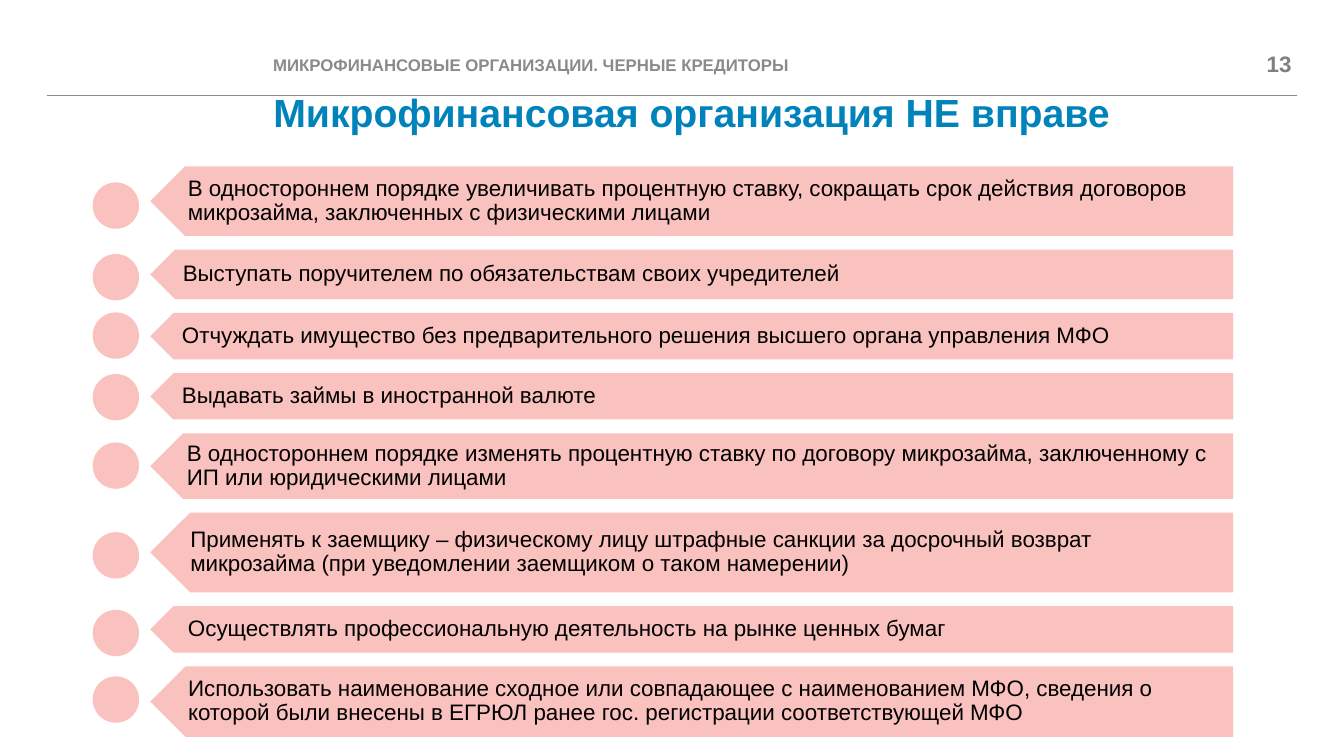
"""Build the slide listing what a microfinance organisation may not do."""
import pptx
import pptx.dml.color
import pptx.enum.shapes
import pptx.enum.text
import pptx.oxml
import pptx.oxml.ns
import pptx.util

COLORS = {"title": "0082BB", "band": "FAC2BF", "text": "000000",
          "header": "888A8D", "number": "808080"}
ALIGN = pptx.enum.text.PP_ALIGN
ANCHOR = pptx.enum.text.MSO_ANCHOR
SHAPE = pptx.enum.shapes.MSO_SHAPE

deck = pptx.Presentation()
deck.slide_width = pptx.util.Inches(13.33)
deck.slide_height = pptx.util.Inches(7.5)
column = deck.slide_width / 100
row = deck.slide_height / 100
slide = deck.slides.add_slide(deck.slide_layouts[5])


def write(box, text, size, color, bold=False, align=ALIGN.LEFT,
          anchor=ANCHOR.TOP, margins=(0, 0, 0, 0), spacing=1.0):
    """Fill a box with one formatted paragraph."""
    frame = box.text_frame
    frame.word_wrap = True
    frame.auto_size = pptx.enum.text.MSO_AUTO_SIZE.NONE
    frame.vertical_anchor = anchor
    (frame.margin_left, frame.margin_top,
     frame.margin_right, frame.margin_bottom) = map(pptx.util.Inches, margins)
    paragraph = frame.paragraphs[0]
    paragraph.text = text
    paragraph.alignment = align
    paragraph.line_spacing = spacing
    paragraph.font.name = "Arial"
    paragraph.font.size = pptx.util.Pt(size)
    paragraph.font.bold = bold
    paragraph.font.color.rgb = pptx.dml.color.RGBColor.from_string(COLORS[color])


def add_plain_shape(kind, left, top, width, height):
    """Add a shape in the band colour without outline or shadow."""
    shape = slide.shapes.add_shape(kind, int(left), int(top), int(width), int(height))
    shape.shadow.inherit = False
    shape.fill.solid()
    shape.fill.fore_color.rgb = pptx.dml.color.RGBColor.from_string(COLORS["band"])
    shape.line.fill.background()
    return shape


rule_y = int(12.67 * row)
header_rule = slide.shapes.add_connector(
    pptx.enum.shapes.MSO_CONNECTOR.STRAIGHT,
    int(3.53 * column), rule_y, int(96.47 * column), rule_y)
header_rule.line.width = pptx.util.Pt(0.5)
header_rule.line.color.rgb = pptx.dml.color.RGBColor.from_string(COLORS["header"])
header_rule._element.spPr.append(
    pptx.oxml.parse_xml(f'<a:effectLst {pptx.oxml.ns.nsdecls("a")}/>'))

page_number = slide.shapes.add_textbox(
    int(92.12 * column), int(5.07 * row), int(3.98 * column), int(6.8 * row))
write(page_number, "13", 16, "number", True, ALIGN.RIGHT, ANCHOR.MIDDLE)

title = slide.shapes.title
title.left, title.top = int(6.9 * column), int(12.4 * row)
title.width, title.height = int(89.12 * column), int(12.93 * row)
write(title, "Микрофинансовая организация НЕ вправе", 28, "title", True,
      ALIGN.CENTER, spacing=0.9)

# (text, band height, dot top, text inset), lengths in rows and inches
prohibitions = [
    ("В одностороннем порядке увеличивать процентную ставку, сокращать срок действия "
     "договоров микрозайма, заключенных с физическими лицами", 9.2, 24.13, 0.2),
    ("Выступать поручителем по обязательствам своих учредителей", 6.53, 33.6, 0.2),
    ("Отчуждать имущество без предварительного решения высшего органа управления МФО",
     6.13, 41.33, 0.2),
    ("Выдавать займы в иностранной валюте", 6.13, 49.47, 0.2),
    ("В одностороннем порядке изменять процентную ставку по договору микрозайма, "
     "заключенному с ИП или юридическими лицами", 8.67, 58.53, 0.2),
    ("Применять к заемщику – физическому лицу штрафные санкции за досрочный возврат "
     "микрозайма (при уведомлении заемщиком о таком намерении)", 10.53, 70.4, 0.2),
    ("Осуществлять профессиональную деятельность на рынке ценных бумаг",
     6.13, 80.67, 0.26),
    ("Использовать наименование сходное или совпадающее с наименованием МФО, сведения "
     "о которой были внесены в ЕГРЮЛ ранее гос. регистрации соответствующей МФО",
     9.33, 89.47, 0.2),
]
band_left, band_width = 11.18 * column, 80.57 * column
dot_left, dot_size = 6.9 * column, 6.13 * row
first_top, last_bottom = 22 * row, 97.47 * row
bands_height = sum(height for _, height, _, _ in prohibitions) * row
gap = (last_bottom - first_top - bands_height) / (len(prohibitions) - 1)

top = first_top
for text, rows, dot_row, inset in prohibitions:
    height = rows * row
    band = add_plain_shape(SHAPE.PENTAGON, band_left, top, band_width, height)
    band.rotation = 180
    arrow_part = height / 4
    label = slide.shapes.add_textbox(
        int(band_left + arrow_part), int(top), int(band_width - arrow_part), int(height))
    write(label, text, 16, "text", anchor=ANCHOR.MIDDLE,
          margins=(inset, 0.07, 0.12, 0.07), spacing=0.9)
    add_plain_shape(SHAPE.OVAL, dot_left, dot_row * row, dot_size, dot_size)
    top += height + gap

section = slide.shapes.add_textbox(
    int(19.35 * column), int(6.27 * row), int(69.24 * column), int(4.67 * row))
write(section, "МИКРОФИНАНСОВЫЕ ОРГАНИЗАЦИИ. ЧЕРНЫЕ КРЕДИТОРЫ", 12, "header", True,
      margins=(0.13, 0.07, 0.13, 0.07))

deck.save("out.pptx")
